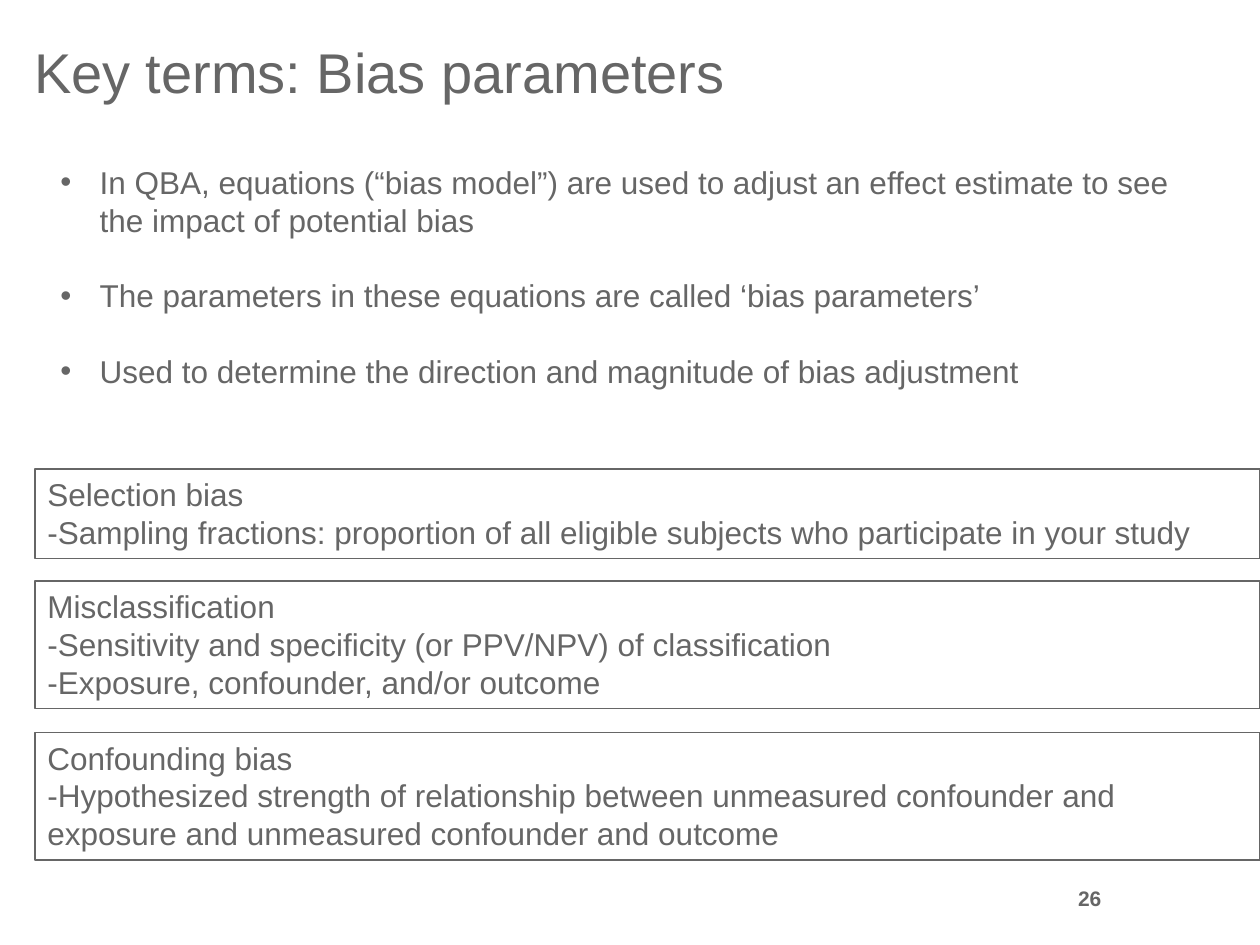
import pptx
import pptx.util
import pptx.dml.color
import pptx.enum.shapes
import pptx.enum.text
from lxml import etree

Pt = pptx.util.Pt
Align = pptx.enum.text.PP_ALIGN
Anchor = pptx.enum.text.MSO_ANCHOR
HUES = {"gray": "666666"}
FONT = "Arial"

TITLE = "Key terms: Bias parameters"
POINTS = [
    "In QBA, equations (“bias model”) are used to adjust an effect estimate to see the impact of potential bias",
    "The parameters in these equations are called ‘bias parameters’",
    "Used to determine the direction and magnitude of bias adjustment",
]
BOXES = [
    (268, 51, ["Selection bias",
               "-Sampling fractions: proportion of all eligible subjects who participate in your study"]),
    (332, 73, ["Misclassification",
               "-Sensitivity and specificity (or PPV/NPV) of classification",
               "-Exposure, confounder, and/or outcome"]),
    (418.5, 73, ["Confounding bias",
                 "-Hypothesized strength of relationship between unmeasured confounder and "
                 "exposure and unmeasured confounder and outcome"]),
]
NUMBER = "26"


def color(name):
    return pptx.dml.color.RGBColor.from_string(HUES[name])


def place(shape, left, top, width, height):
    shape.left, shape.top = Pt(left), Pt(top)
    shape.width, shape.height = Pt(width), Pt(height)


def write(shape, lines, size=18, bold=False, align=Align.LEFT,
          anchor=Anchor.TOP, gap=0, indent=0):
    frame = shape.text_frame
    frame.word_wrap = True
    frame.auto_size = pptx.enum.text.MSO_AUTO_SIZE.NONE
    frame.vertical_anchor = anchor
    frame.margin_left = frame.margin_right = Pt(7.2)
    frame.margin_top = frame.margin_bottom = Pt(3.6)
    for i, line in enumerate(lines):
        para = frame.paragraphs[0] if i == 0 else frame.add_paragraph()
        para.text = line
        para.alignment = align
        para.line_spacing = 1.0
        para.space_before = Pt(gap if i else 0)
        para.space_after = Pt(0)
        if indent:
            props = para._p.get_or_add_pPr()
            props.set("marL", str(Pt(indent)))
            props.set("indent", str(-Pt(indent)))
            mark = etree.SubElement(props, pptx.oxml.ns.qn("a:buChar"))
            mark.set("char", "•")
        font = para.font
        font.name, font.size, font.bold = FONT, Pt(size), bold
        font.color.rgb = color("gray")


deck = pptx.Presentation()
deck.slide_width, deck.slide_height = Pt(720), Pt(540)
slide = deck.slides.add_slide(deck.slide_layouts[1])
title, body = slide.placeholders

place(title, 12.25, 18, 581, 46)
write(title, [TITLE], size=32)

place(body, 27.25, 89.5, 669.5, 138)
write(body, POINTS, gap=21.6, indent=22.5)

for top, height, lines in BOXES:
    box = slide.shapes.add_shape(
        pptx.enum.shapes.MSO_SHAPE.RECTANGLE, Pt(20), Pt(top), Pt(700), Pt(height))
    box.shadow.inherit = False
    box.fill.background()
    box.line.color.rgb = color("gray")
    box.line.width = Pt(0.75)
    write(box, lines)

number = slide.shapes.add_textbox(Pt(594), Pt(492), Pt(42.5), Pt(42))
write(number, [NUMBER], size=12, bold=True, align=Align.RIGHT, anchor=Anchor.MIDDLE)

deck.save("out.pptx")
